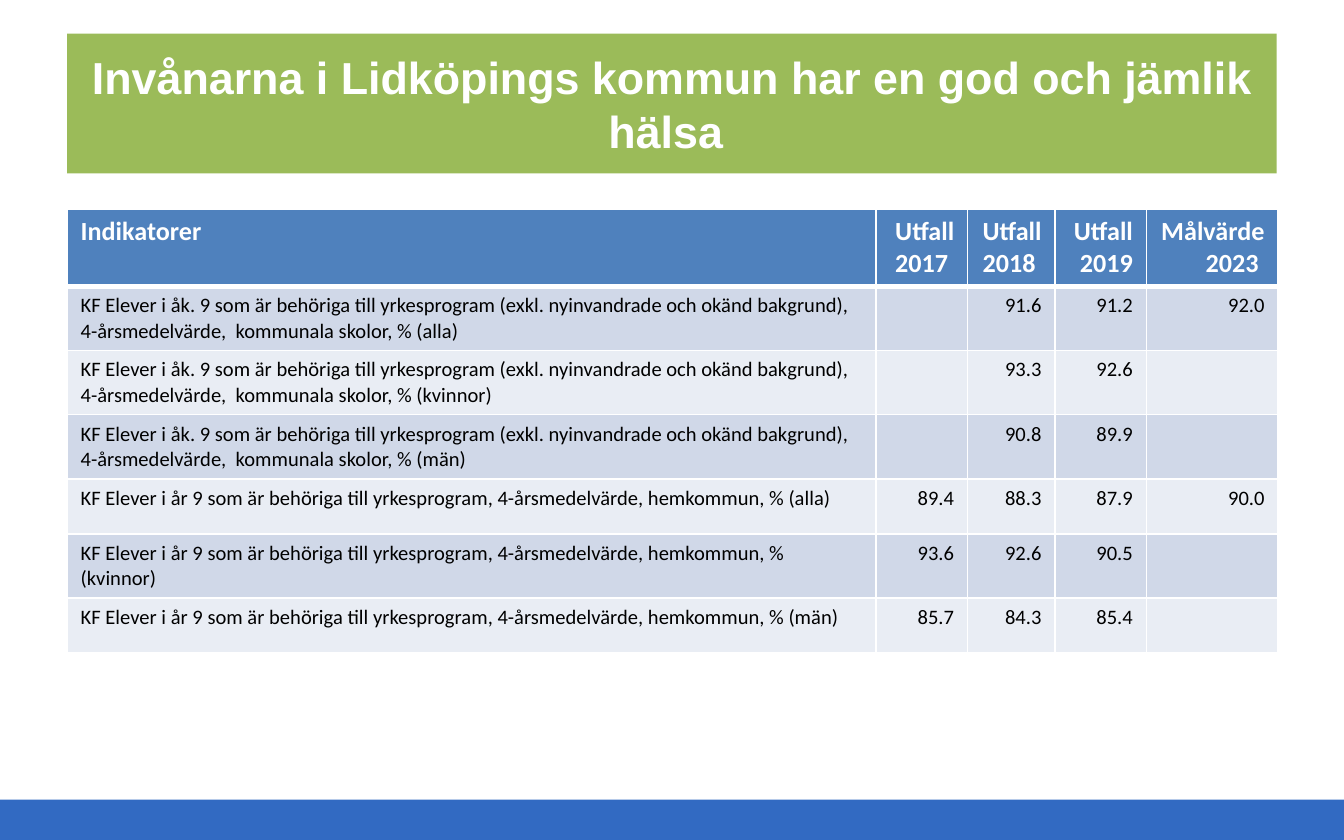
"""Build the slide of school indicators for health in Lidköping."""
from lxml import etree
from pptx import Presentation
from pptx.dml.color import RGBColor
from pptx.enum.shapes import MSO_SHAPE
from pptx.enum.text import MSO_ANCHOR, PP_ALIGN
from pptx.oxml.ns import qn
from pptx.util import Inches, Pt

RECT = MSO_SHAPE.RECTANGLE
MIDDLE = MSO_ANCHOR.MIDDLE
LEFT, CENTER, RIGHT = PP_ALIGN.LEFT, PP_ALIGN.CENTER, PP_ALIGN.RIGHT
WHITE = RGBColor(0xFF, 0xFF, 0xFF)
BLACK = RGBColor(0x00, 0x00, 0x00)
GREEN = RGBColor(0x9B, 0xBB, 0x59)
BLUE = RGBColor(0x32, 0x6A, 0xC2)
HEADER = RGBColor(0x4F, 0x81, 0xBD)
BANDS = [RGBColor(0xE9, 0xED, 0xF4), RGBColor(0xD0, 0xD8, 0xE8)]

WIDTH, HEIGHT = Inches(10), Inches(6.25)
MARGIN = int(WIDTH * 0.05)
INNER = WIDTH - 2 * MARGIN
COLUMNS = [6.02, 0.68, 0.65, 0.68, 0.98]
ROW = Inches(0.41)

PROGRAM = "som är behöriga till yrkesprogram"
SCHOOLS = (f"KF Elever i åk. 9 {PROGRAM} (exkl. nyinvandrade och okänd bakgrund), "
           "4-årsmedelvärde,  kommunala skolor, %")
HOME = f"KF Elever i år 9 {PROGRAM}, 4-årsmedelvärde, hemkommun, %"
ROWS = [
    ["Indikatorer", "Utfall 2017 ", "Utfall 2018 ", "Utfall 2019", "Målvärde 2023 "],
    [f"{SCHOOLS} (alla)", "", "91.6", "91.2", "92.0"],
    [f"{SCHOOLS} (kvinnor)", "", "93.3", "92.6", ""],
    [f"{SCHOOLS} (män)", "", "90.8", "89.9", ""],
    [f"{HOME} (alla)", "89.4", "88.3", "87.9", "90.0"],
    [f"{HOME} (kvinnor)", "93.6", "92.6", "90.5", ""],
    [f"{HOME} (män)", "85.7", "84.3", "85.4", ""],
]


def add_run(p, text, font, size, color, bold, align):
    p.alignment = align
    r = p.add_run()
    r.text = text
    r.font.name, r.font.size, r.font.bold = font, Pt(size), bold
    r.font.color.rgb = color


def set_borders(cell, bottom):
    tcPr = cell._tc.get_or_add_tcPr()
    for i, (side, width) in enumerate(zip("LRTB", (1, 1, 1, bottom))):
        ln = etree.Element(qn(f"a:ln{side}"), w=str(Pt(width)))
        fill = etree.SubElement(ln, qn("a:solidFill"))
        etree.SubElement(fill, qn("a:srgbClr"), val=str(WHITE))
        tcPr.insert(i, ln)


prs = Presentation()
prs.slide_width, prs.slide_height = WIDTH, HEIGHT
s = prs.slides.add_slide(prs.slide_layouts[6])

bar_top = int(HEIGHT * 0.952)
bar = s.shapes.add_shape(RECT, 0, bar_top, WIDTH, HEIGHT - bar_top)
title = s.shapes.add_shape(RECT, MARGIN, int(HEIGHT * 0.04), INNER, Inches(1.04))
for sp, color in ((bar, BLUE), (title, GREEN)):
    sp.shadow.inherit = False
    sp.fill.solid()
    sp.fill.fore_color.rgb = color
    sp.line.fill.background()

tf = title.text_frame
tf.word_wrap = True
tf.vertical_anchor = MIDDLE
add_run(tf.paragraphs[0], "Invånarna i Lidköpings kommun har en god och jämlik hälsa ",
        "Arial", 24, WHITE, True, CENTER)

table = s.shapes.add_table(len(ROWS), len(COLUMNS), MARGIN, int(HEIGHT * 0.249),
                           INNER, ROW * len(ROWS)).table
for column, width in zip(table.columns, COLUMNS):
    column.width = Inches(width)
for i, values in enumerate(ROWS):
    table.rows[i].height = ROW
    head = i == 0
    for j, value in enumerate(values):
        cell = table.cell(i, j)
        cell.fill.solid()
        cell.fill.fore_color.rgb = HEADER if head else BANDS[i % 2]
        set_borders(cell, 3 if head else 1)
        if value:
            add_run(cell.text_frame.paragraphs[0], value, "Calibri", 14 if head else 11,
                    WHITE if head else BLACK, head, RIGHT if j else LEFT)

prs.save("out.pptx")
